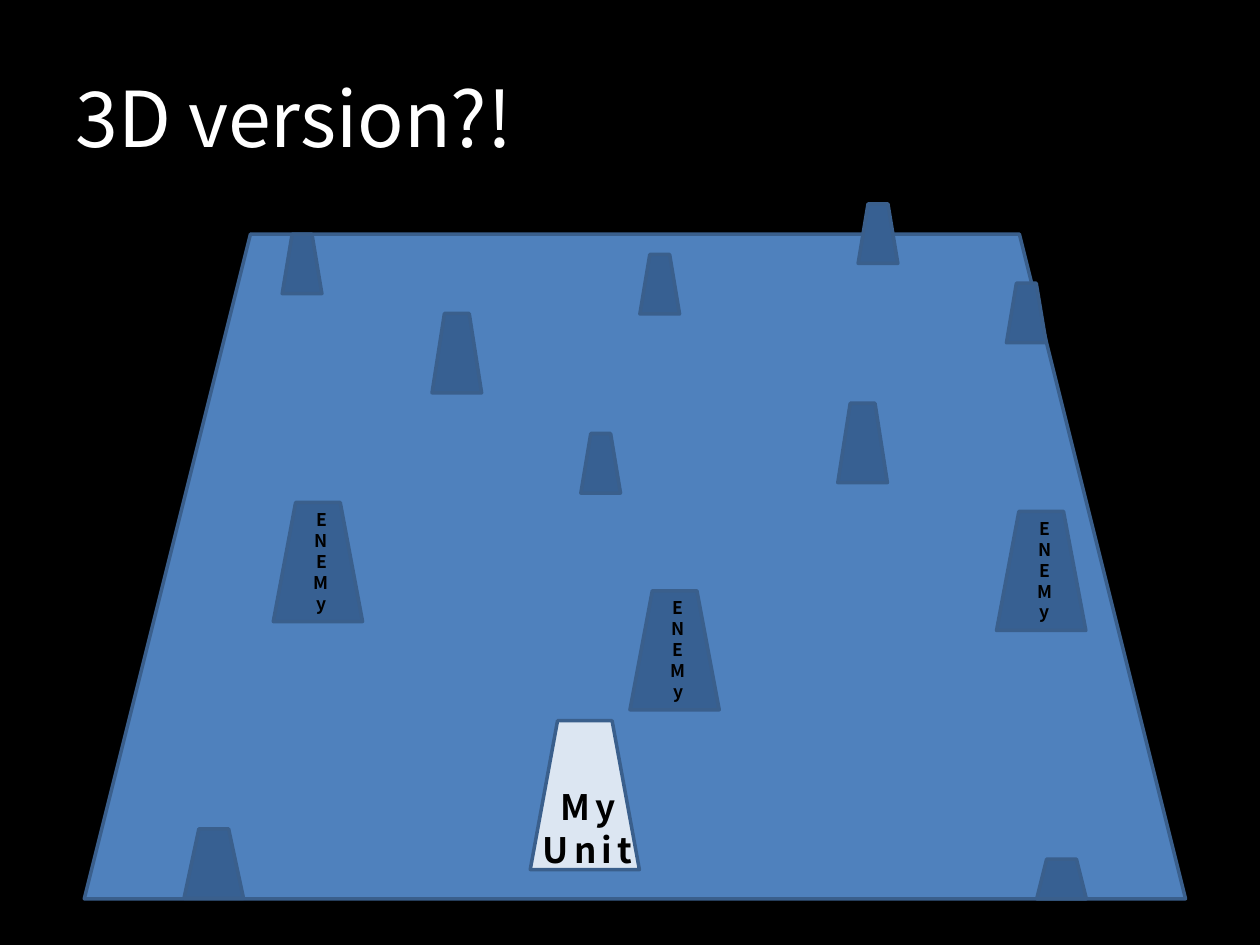
from pptx import Presentation
from pptx.dml.color import RGBColor
from pptx.enum.shapes import MSO_SHAPE
from pptx.enum.text import MSO_ANCHOR, MSO_AUTO_SIZE, PP_ALIGN
from pptx.util import Cm, Pt

TRAPEZOID = MSO_SHAPE.TRAPEZOID
MIDDLE = MSO_ANCHOR.MIDDLE
GROW = MSO_AUTO_SIZE.SHAPE_TO_FIT_TEXT
LEFT, CENTER = PP_ALIGN.LEFT, PP_ALIGN.CENTER

# Width and height in cm, then the left and top of each enemy of that size
ENEMIES = {
    (0.8, 1.2): [(5.69, 4.72), (12.9, 5.13), (17.3, 4.11), (20.29, 5.71), (11.71, 8.74)],
    (1.0, 1.6): [(8.71, 6.32), (16.89, 8.13)],
    (1.2, 1.4): [(3.71, 16.71)],
    (1.0, 0.8): [(20.9, 17.32)],
}
NEAR_SIZE = (1.8, 2.4)
NEAR_ENEMIES = [(5.51, 10.13), (12.7, 11.91), (20.09, 10.31)]


def color(hex_value):
    return RGBColor.from_string(hex_value)


def apply(target, values):
    for name, value in values.items():
        setattr(target, name, value)


class Board:
    FONT = "Noto Sans CJK KR"
    BACKGROUND, TITLE, TEXT = "000000", "FFFFFF", "000000"
    FIELD, ENEMY, UNIT, LINE = "4F81BD", "376092", "DCE6F2", "3A5F8C"

    def __init__(self, prs):
        self.s = prs.slides.add_slide(prs.slide_layouts[5])
        fill = self.s.background.fill
        fill.solid()
        fill.fore_color.rgb = color(self.BACKGROUND)

    def style_run(self, r, size, hex_value, bold=False):
        apply(r.font, {"name": self.FONT, "size": Pt(size), "bold": bold})
        r.font.color.rgb = color(hex_value)

    def title(self, text):
        sp = self.s.shapes.title
        apply(sp, {"left": Cm(1.27), "top": Cm(0.76),
                   "width": Cm(22.86), "height": Cm(3.18)})
        tf = sp.text_frame
        tf.vertical_anchor = MIDDLE
        p = tf.paragraphs[0]
        p.alignment = LEFT
        r = p.add_run()
        r.text = text
        self.style_run(r, 44, self.TITLE)

    def trapezoid(self, left, top, width, height, fill):
        sp = self.s.shapes.add_shape(TRAPEZOID, Cm(left), Cm(top), Cm(width), Cm(height))
        sp.shadow.inherit = False
        sp.fill.solid()
        sp.fill.fore_color.rgb = color(fill)
        sp.line.color.rgb = color(self.LINE)
        sp.line.width = Pt(2)

    def label(self, left, top, width, height, lines, size, wrap=True):
        sp = self.s.shapes.add_textbox(Cm(left), Cm(top), Cm(width), Cm(height))
        tf = sp.text_frame
        apply(tf, {"word_wrap": wrap, "auto_size": GROW})
        for i, line in enumerate(lines):
            p = tf.add_paragraph() if i else tf.paragraphs[0]
            apply(p, {"alignment": CENTER, "line_spacing": Pt(1.2 * size)})
            r = p.add_run()
            r.text = line
            self.style_run(r, size, self.TEXT, bold=True)
            r.font._element.set("spc", "300")


def main():
    prs = Presentation()
    prs.slide_width, prs.slide_height = Cm(25.4), Cm(19.05)
    board = Board(prs)
    board.title("3D version?!")
    board.trapezoid(1.7, 4.72, 22.2, 13.4, board.FIELD)

    for size, places in ENEMIES.items():
        for place in places:
            board.trapezoid(*place, *size, board.ENEMY)
    for left, top in NEAR_ENEMIES:
        board.trapezoid(left, top, *NEAR_SIZE, board.ENEMY)
        board.label(left + 0.36, top, 1.22, 2.4, "ENEMy", 10)

    board.trapezoid(10.69, 14.53, 2.2, 3, board.UNIT)
    board.label(10.67, 15.72, 2.36, 1.96, ["My", "Unit"], 20, wrap=False)
    prs.save("out.pptx")


if __name__ == "__main__":
    main()
